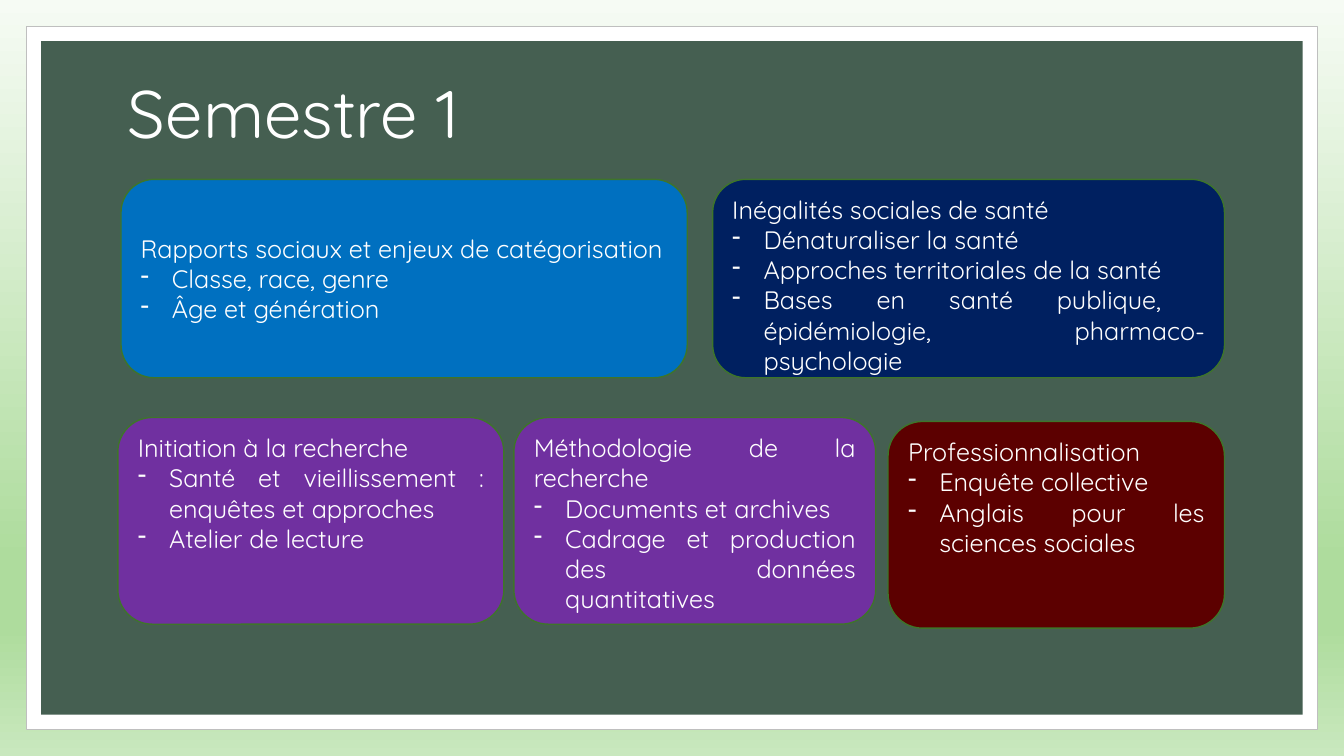
from copy import deepcopy
from dataclasses import dataclass

from lxml.etree import SubElement
from pptx import Presentation
from pptx.dml.color import RGBColor
from pptx.enum.shapes import MSO_SHAPE
from pptx.enum.text import MSO_ANCHOR, MSO_AUTO_SIZE, PP_ALIGN
from pptx.oxml.ns import qn
from pptx.util import Cm, Pt


@dataclass(frozen=True)
class Theme:
    font: str = "Quicksand"
    title_size: int = 48
    body_size: int = 18
    text: str = "FFFFFF"
    frame: str = "FFFFFF"
    frame_line: str = "BFBFBF"
    board: str = "455F51"
    card_line: str = "3E752A"
    blue: str = "0070C0"
    navy: str = "002060"
    purple: str = "7030A0"
    maroon: str = "5C0000"
    backdrop: tuple = ((0, "F6FBF4"), (0.74, "AEDC9D"), (0.83, "AEDC9D"), (1, "C9E8BE"))


THEME = Theme()
SLIDE_WIDTH, SLIDE_HEIGHT = 33.87, 19.05
HANGING = Cm(0.79)

# left, top, width, height (cm), colour, anchor, heading, topics
COURSES = [
    (3.05, 4.52, 14.27, 5, THEME.blue, MSO_ANCHOR.MIDDLE,
     "Rapports sociaux et enjeux de catégorisation",
     ["Classe, race, genre", "Âge et génération"]),
    (17.96, 4.52, 12.9, 5, THEME.navy, MSO_ANCHOR.TOP,
     "Inégalités sociales de santé",
     ["Dénaturaliser la santé", "Approches territoriales de la santé",
      "Bases en santé publique,  épidémiologie, pharmaco-psychologie"]),
    (2.97, 10.52, 9.73, 5.21, THEME.purple, MSO_ANCHOR.TOP,
     "Initiation à la recherche",
     ["Santé et vieillissement : enquêtes et approches", "Atelier de lecture"]),
    (12.95, 10.52, 9.12, 5.21, THEME.purple, MSO_ANCHOR.TOP,
     "Méthodologie de la recherche",
     ["Documents et archives", "Cadrage et production des données quantitatives"]),
    (22.38, 10.62, 8.48, 5.21, THEME.maroon, MSO_ANCHOR.TOP,
     "Professionnalisation",
     ["Enquête collective", "Anglais pour les sciences sociales"]),
]


def write(paragraph, text, size=THEME.body_size, color=THEME.text,
          align=PP_ALIGN.JUSTIFY, spacing=None, bullet=None):
    paragraph.alignment = align
    paragraph.line_spacing = spacing
    run = paragraph.add_run()
    run.text = text
    run.font.name = THEME.font
    run.font.size = Pt(size)
    run.font.color.rgb = RGBColor.from_string(color)
    if bullet:
        properties = paragraph._p.get_or_add_pPr()
        properties.set("marL", str(HANGING))
        properties.set("indent", str(-HANGING))
        SubElement(properties, qn("a:buChar")).set("char", bullet)


def paint_backdrop(slide):
    fill = slide.background.fill
    fill.gradient()
    fill.gradient_angle = 270
    stop_list = slide.element.find(".//" + qn("a:gsLst"))
    for _ in range(len(THEME.backdrop) - len(stop_list)):
        stop_list.append(deepcopy(stop_list[0]))
    for stop, (position, color) in zip(fill.gradient_stops, THEME.backdrop):
        stop.position = position
        stop.color.rgb = RGBColor.from_string(color)


def add_block(slide, kind, left, top, width, height, color, line=None, line_width=1):
    block = slide.shapes.add_shape(kind, Cm(left), Cm(top), Cm(width), Cm(height))
    block.shadow.inherit = False
    block.fill.solid()
    block.fill.fore_color.rgb = RGBColor.from_string(color)
    if line:
        block.line.color.rgb = RGBColor.from_string(line)
        block.line.width = Pt(line_width)
    else:
        block.line.fill.background()
    return block


def add_panel(slide, inset, color, line=None):
    """Add a rectangle set in equally from all slide edges, behind the title."""
    panel = add_block(slide, MSO_SHAPE.RECTANGLE, inset, inset,
                      SLIDE_WIDTH - 2 * inset, SLIDE_HEIGHT - 2 * inset,
                      color, line, line_width=0.5)
    slide.shapes.title.element.addprevious(panel.element)


def place_title(slide, text):
    title = slide.shapes.title
    title.left, title.top = Cm(2.97), Cm(1.78)
    title.width, title.height = Cm(27.94), Cm(2.34)
    frame = title.text_frame
    frame.vertical_anchor = MSO_ANCHOR.MIDDLE
    frame.auto_size = MSO_AUTO_SIZE.NONE
    write(frame.paragraphs[0], text, size=THEME.title_size,
          align=PP_ALIGN.LEFT, spacing=0.9)


def add_course(slide, left, top, width, height, color, anchor, heading, topics):
    card = add_block(slide, MSO_SHAPE.ROUNDED_RECTANGLE, left, top, width, height,
                     color, THEME.card_line)
    frame = card.text_frame
    frame.word_wrap = True
    frame.vertical_anchor = anchor
    write(frame.paragraphs[0], heading)
    for topic in topics:
        write(frame.add_paragraph(), topic, bullet="-")


def main():
    presentation = Presentation()
    presentation.slide_width = Cm(SLIDE_WIDTH)
    presentation.slide_height = Cm(SLIDE_HEIGHT)
    slide = presentation.slides.add_slide(presentation.slide_layouts.get_by_name("Title Only"))
    paint_backdrop(slide)
    add_panel(slide, 0.66, THEME.frame, THEME.frame_line)
    add_panel(slide, 1.04, THEME.board)
    place_title(slide, "Semestre 1")
    for course in COURSES:
        add_course(slide, *course)
    presentation.save("out.pptx")


if __name__ == "__main__":
    main()
